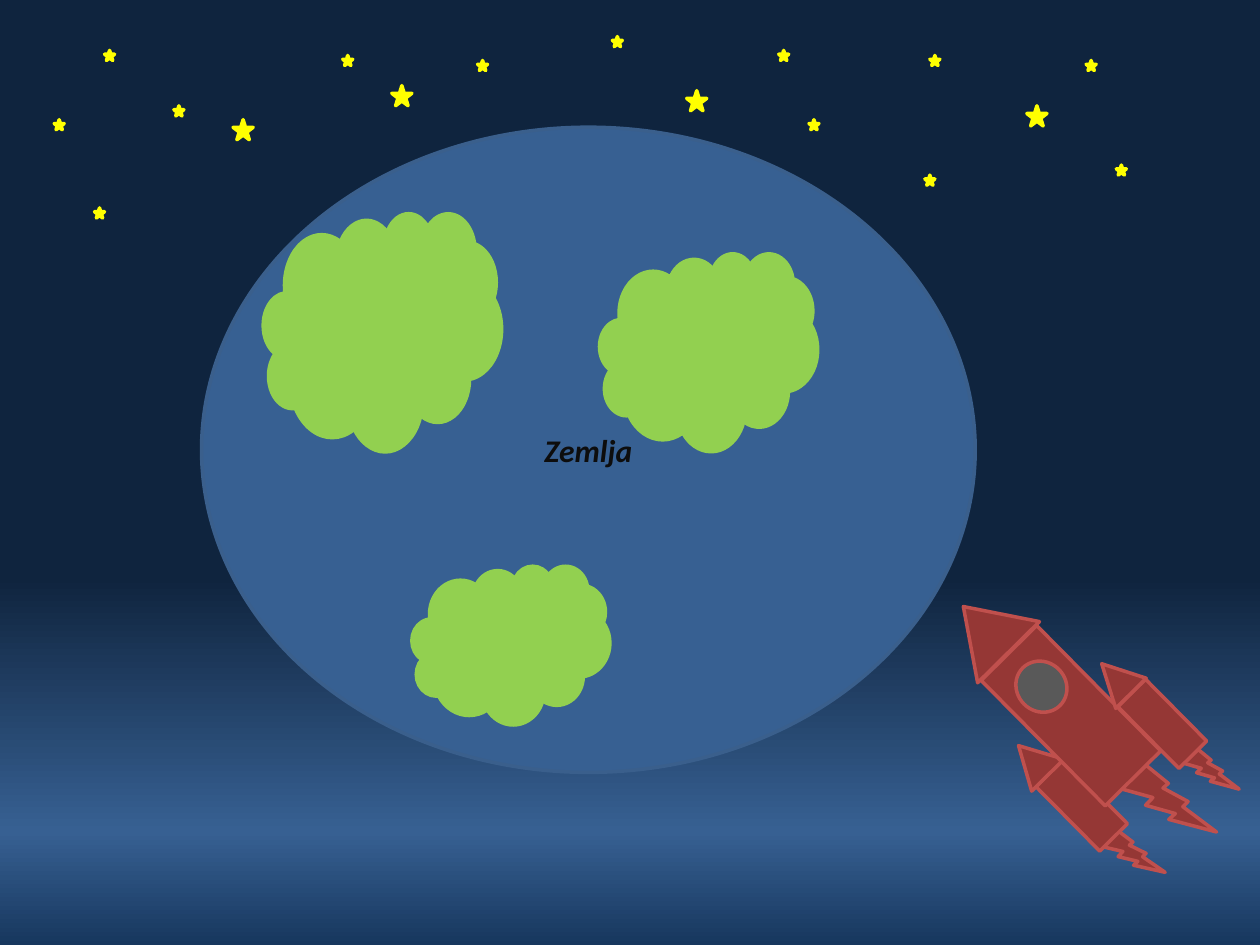
"""Draw planet Earth under a starry sky with a rocket flying past."""

from dataclasses import dataclass

import lxml.etree
import pptx
import pptx.dml.color
import pptx.enum.shapes
import pptx.enum.text
import pptx.oxml.ns
import pptx.shapes.autoshape
import pptx.shapes.shapetree
import pptx.slide
import pptx.util

RGB = pptx.dml.color.RGBColor
NIGHT = RGB(0x0F, 0x24, 0x3E)
HORIZON = RGB(0x37, 0x60, 0x92)
DUSK = RGB(0x17, 0x37, 0x5E)
OCEAN_EDGE = RGB(0x3A, 0x5F, 0x8C)
LAND = RGB(0x92, 0xD0, 0x50)
STAR = RGB(0xFF, 0xFF, 0x00)
HULL = RGB(0x95, 0x37, 0x35)
HULL_EDGE = RGB(0xC0, 0x50, 0x4D)
WINDOW = RGB(0x59, 0x59, 0x59)
INK = RGB(0x0D, 0x0D, 0x0D)

SLIDE_WIDTH = pptx.util.Inches(10)
SLIDE_HEIGHT = pptx.util.Inches(7.5)
COLUMNS, ROWS = 100, 75
COLUMN, ROW = SLIDE_WIDTH / COLUMNS, SLIDE_HEIGHT / ROWS
TILT = 315.3

Kind = pptx.enum.shapes.MSO_SHAPE
SKY = ((0, NIGHT), (34, NIGHT), (61, NIGHT), (88, HORIZON), (100, DUSK))


@dataclass(frozen=True)
class Part:
    """A preset shape placed in grid columns and rows."""

    kind: Kind
    column: float
    row: float
    columns: float
    rows: float
    fill: RGB
    edge: RGB
    rotation: float = 0


def land(column: float, row: float, columns: float, rows: float) -> Part:
    """Describe a continent."""
    return Part(Kind.CLOUD, column, row, columns, rows, LAND, LAND)


def star(column: float, row: float, size: float) -> Part:
    """Describe a star."""
    return Part(Kind.STAR_5_POINT, column, row, size, size, STAR, STAR)


def hull(kind: Kind, column: float, row: float, columns: float, rows: float,
         rotation: float = TILT, fill: RGB = HULL) -> Part:
    """Describe a piece of the rocket."""
    return Part(kind, column, row, columns, rows, fill, HULL_EDGE, rotation)


EARTH = Part(Kind.OVAL, 16, 10.1, 61.4, 51.2, HORIZON, OCEAN_EDGE)
CONTINENTS = (
    land(47.6, 20.1, 17.3, 15.7),
    land(20.9, 16.9, 18.9, 18.9),
    land(32.7, 44.9, 15.7, 12.6),
)
SMALL_STARS = (
    (13.8, 8.4), (27.2, 4.4), (7.5, 16.5), (48.6, 2.9), (61.8, 4),
    (86.2, 4.8), (8.3, 4), (73.4, 13.9), (64.2, 9.5), (73.8, 4.4),
    (37.9, 4.8), (88.6, 13.1), (4.3, 9.5),
)
LARGE_STARS = ((54.5, 7.2), (81.5, 8.4), (31.1, 6.8), (18.5, 9.5))
STARS = tuple(
    star(column, row, size)
    for places, size in ((SMALL_STARS, 0.8), (LARGE_STARS, 1.6))
    for column, row in places
)
ROCKET = (
    hull(Kind.LIGHTNING_BOLT, 87.8, 65.7, 4.1, 4.3, 341.5),
    hull(Kind.RECTANGLE, 84.3, 60.3, 3.1, 7.2),
    hull(Kind.ISOSCELES_TRIANGLE, 80.2, 58.7, 3.6, 3.3),
    hull(Kind.ISOSCELES_TRIANGLE, 74.8, 47.4, 6.9, 5.1),
    hull(Kind.LIGHTNING_BOLT, 94.1, 59.3, 3.8, 3.9, 344.7),
    hull(Kind.LIGHTNING_BOLT, 89.5, 60.4, 6.2, 6.7, 342.8),
    hull(Kind.RECTANGLE, 81.9, 49.8, 6.2, 14),
    hull(Kind.RECTANGLE, 90.7, 54, 3.1, 6.9),
    hull(Kind.ISOSCELES_TRIANGLE, 86.9, 52.2, 3.4, 3.3),
    hull(Kind.OVAL, 80.7, 52.4, 3.9, 4.2, fill=WINDOW),
)


def draw(shapes: pptx.shapes.shapetree.SlideShapes | pptx.shapes.shapetree.GroupShapes,
         part: Part) -> pptx.shapes.autoshape.Shape:
    """Add one part to a slide or a group."""
    shape = shapes.add_shape(
        part.kind, round(part.column * COLUMN), round(part.row * ROW),
        round(part.columns * COLUMN), round(part.rows * ROW))
    shape.rotation = part.rotation
    shape.shadow.inherit = False
    shape.fill.solid()
    shape.fill.fore_color.rgb = part.fill
    shape.line.color.rgb = part.edge
    shape.line.width = pptx.util.Pt(2)
    return shape


def paint_sky(slide: pptx.slide.Slide) -> None:
    """Fill the background from night down to the bright horizon."""
    qn = pptx.oxml.ns.qn
    fill = slide.background.fill
    fill.gradient()
    fill.gradient_angle = 270
    stops = next(slide.element.iter(qn("a:gsLst")))
    for stop in list(stops):
        stops.remove(stop)
    for percent, color in SKY:
        stop = lxml.etree.SubElement(stops, qn("a:gs"), pos=str(percent * 1000))
        lxml.etree.SubElement(stop, qn("a:srgbClr"), val=str(color))


def write_name(planet: pptx.shapes.autoshape.Shape, name: str) -> None:
    """Write the planet's name in its middle."""
    planet.text_frame.vertical_anchor = pptx.enum.text.MSO_ANCHOR.MIDDLE
    paragraph = planet.text_frame.paragraphs[0]
    paragraph.alignment = pptx.enum.text.PP_ALIGN.CENTER
    run = paragraph.add_run()
    run.text = name
    run.font.name = "Calibri"
    run.font.size = pptx.util.Pt(18)
    run.font.bold = run.font.italic = True
    run.font.color.rgb = INK


def main() -> None:
    """Build and save the slide."""
    deck = pptx.Presentation()
    deck.slide_width, deck.slide_height = SLIDE_WIDTH, SLIDE_HEIGHT
    slide = deck.slides.add_slide(deck.slide_layouts[6])
    paint_sky(slide)
    write_name(draw(slide.shapes, EARTH), "Zemlja")
    for continent in CONTINENTS:
        draw(slide.shapes, continent)
    for parts in (STARS, ROCKET):
        group = slide.shapes.add_group_shape()
        for part in parts:
            draw(group.shapes, part)
    deck.save("out.pptx")


if __name__ == "__main__":
    main()
